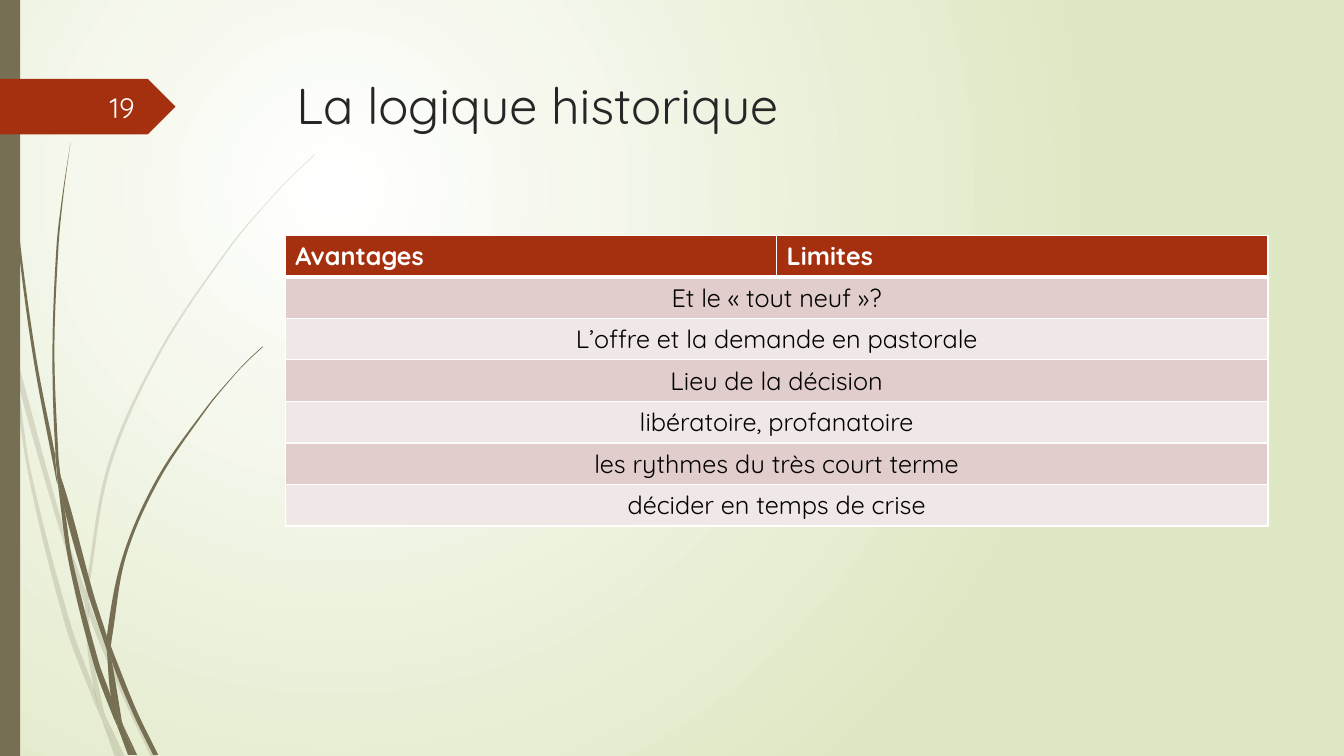
from pptx import Presentation
from pptx.dml.color import RGBColor
from pptx.enum.shapes import MSO_SHAPE as SHAPE
from pptx.enum.text import MSO_ANCHOR as ANCHOR, PP_ALIGN as ALIGN
from pptx.oxml import parse_xml
from pptx.oxml.ns import nsdecls, qn
from pptx.util import Inches, Pt

W, H = Inches(13.33), Inches(7.5)
COLS, ROWS = 160, 90
FONT = "Quicksand"
RUST, OLIVE, WHITE = "A53010", "766F54", "FFFFFF"
BANDS = ("E1CDCC", "F0E8E7")

HEADERS = ("Avantages", "Limites")
TOPICS = (
    "Et le « tout neuf »?",
    "L’offre et la demande en pastorale",
    "Lieu de la décision",
    "libératoire, profanatoire",
    "les rythmes du très court terme",
    "décider en temps de crise",
)

BLADE_ROWS = 750
PALE_BLADES = (
    ([(11, 350), (9, 322), (0, 282)], [(0, 299), (10, 344)]),
    ([(14, 345), (17, 376), (58, 522), (84, 599)], [(85, 586), (62, 520), (14, 345)]),
    ([(88, 596), (88, 610), (123, 694), (150, 751)], [(155, 751), (127, 692), (92, 607)]),
    ([(119, 751), (124, 751)], [(105, 711)]),
    ([(11, 350), (28, 470), (65, 621), (92, 693), (101, 714)],
     [(99, 707), (93, 683), (70, 619), (31, 469), (17, 376), (11, 350)]),
    ([(84, 599), (87, 646), (93, 683), (96, 692), (105, 711)],
     [(103, 706), (91, 646), (88, 610), (88, 608)]),
    ([(88, 584), (110, 462), (160, 349), (229, 245), (268, 198), (290, 175), (312, 154)],
     [(312, 153), (289, 175), (268, 197), (228, 244), (158, 348), (107, 461),
      (85, 584), (85, 586), (88, 596)]),
    ([(101, 714), (114, 751)], [(119, 751), (101, 714)]),
    ([(88, 608), (88, 610), (88, 596)], [(85, 586), (84, 599)]),
    ([(96, 692), (93, 683), (99, 707), (101, 714), (119, 751)], [(119, 751), (105, 711)]),
)
DARK_BLADES = (
    ([(7, 110), (17, 233), (33, 355), (56, 477), (57, 481)],
     [(55, 457), (55, 453), (36, 355), (19, 232), (8, 109), (5, 48), (4, 0), (3, 0), (4, 48)]),
    ([(88, 592), (106, 645)], [(106, 633), (106, 631), (93, 590), (60, 472), (64, 505), (88, 592)]),
    ([(110, 641), (111, 656), (132, 708), (152, 749)], [(157, 749), (136, 706), (113, 649)]),
    ([(57, 477), (68, 557), (93, 659), (111, 708), (117, 722)],
     [(116, 717), (110, 691), (98, 657), (72, 556), (64, 505), (57, 477)]),
    ([(60, 472), (58, 453), (54, 349), (58, 245), (63, 193), (70, 141)],
     [(70, 141), (62, 193), (56, 245), (52, 349), (55, 449), (60, 472)]),
    ([(133, 749), (136, 749)], [(122, 719)]),
    ([(57, 477), (64, 505)], [(60, 472), (55, 449), (55, 453)]),
    ([(111, 633), (125, 552), (158, 476), (205, 406), (231, 374), (245, 359), (261, 344)],
     [(260, 344), (245, 358), (231, 373), (204, 405), (156, 474), (122, 551),
      (106, 631), (110, 641)]),
    ([(117, 722), (127, 749)], [(131, 749), (117, 722)]),
    ([(106, 645), (110, 691), (116, 706), (122, 719)], [(121, 716), (111, 656), (109, 651)]),
    ([(106, 645), (109, 651), (111, 656)], [(110, 641), (106, 631), (106, 633)]),
    ([(116, 706), (110, 691), (116, 717), (117, 722), (130, 749)], [(133, 749), (122, 719)]),
)


def rgb(value):
    return RGBColor.from_string(value)


def grid(col, row, cols, rows):
    return tuple(round(n) for n in (W * col / COLS, H * row / ROWS, W * cols / COLS, H * rows / ROWS))


def write(tf, text, size=18, color="000000", bold=False, align=ALIGN.LEFT, anchor=ANCHOR.TOP):
    tf.word_wrap = True
    tf.vertical_anchor = anchor
    p = tf.paragraphs[0]
    p.alignment = align
    r = p.add_run()
    r.text = text
    r.font.name, r.font.size, r.font.bold = FONT, Pt(size), bold
    r.font.color.rgb = rgb(color)


def paint(sp, color, alpha=100):
    sp.shadow.inherit = False
    sp.fill.solid()
    sp.fill.fore_color.rgb = rgb(color)
    sp.line.fill.background()
    if alpha < 100:
        clr = sp.fill._xPr.find(".//" + qn("a:srgbClr"))
        clr.append(parse_xml(f'<a:alpha {nsdecls("a")} val="{alpha * 1000}"/>'))


def add_background(s):
    fill = s.background.fill
    fill.gradient()
    for stop, color, position in zip(fill.gradient_stops, (WHITE, "DFE8C4"), (0, 1)):
        stop.color.rgb = rgb(color)
        stop.position = position
    grad = s.element.find(".//" + qn("a:gradFill"))
    lin = grad.find(qn("a:lin"))
    grad.replace(lin, parse_xml(
        f'<a:path {nsdecls("a")} path="circle">'
        '<a:fillToRect l="50000" t="50000" r="100000" b="100000"/></a:path>'))


def along(chord, length):
    return chord / abs(chord) * length / 3 if chord else 0


def bend(sp, edge_sizes):
    outline = sp._element.find(".//" + qn("a:path"))
    nodes = [complex(int(pt.get("x")), int(pt.get("y"))) for pt in outline.iter(qn("a:pt"))]
    lines = outline.findall(qn("a:lnTo"))
    start = 0
    for size in edge_sizes:
        edge = nodes[start:start + size]
        ends = [edge[0], *edge, edge[-1]]
        for i, (a, b, c, d) in enumerate(zip(ends, ends[1:], ends[2:], ends[3:])):
            length = abs(c - b)
            curve = (b + along(c - a, length), c - along(d - b, length), c)
            pts = "".join(f'<a:pt x="{round(n.real)}" y="{round(n.imag)}"/>' for n in curve)
            outline.replace(lines[start + i], parse_xml(
                f'<a:cubicBezTo {nsdecls("a")}>{pts}</a:cubicBezTo>'))
        start += size


def add_grass(s, box, blades, alpha=100):
    left, top, _, height = box
    unit = height / BLADE_ROWS
    tuft = s.shapes.add_group_shape()
    for near, far in blades:
        outline = [(left + x * unit, top + y * unit) for x, y in near + far]
        pen = tuft.shapes.build_freeform(*outline[0])
        pen.add_line_segments(outline[1:], close=True)
        sp = pen.convert_to_shape()
        bend(sp, (len(near), len(far)))
        paint(sp, OLIVE, alpha)


def add_block(s, box, kind, color):
    paint(s.shapes.add_shape(kind, *box), color)


def add_label(s, box, text, **fmt):
    write(s.shapes.add_textbox(*box).text_frame, text, **fmt)


def style_cell(cell, color, bottom):
    cell.fill.solid()
    cell.fill.fore_color.rgb = rgb(color)
    tcPr = cell._tc.get_or_add_tcPr()
    for i, (side, width) in enumerate((("L", 1), ("R", 1), ("T", 1), ("B", bottom))):
        tcPr.insert(i, parse_xml(
            f'<a:ln{side} {nsdecls("a")} w="{Pt(width)}"><a:solidFill>'
            f'<a:srgbClr val="{WHITE}"/></a:solidFill></a:ln{side}>'))


def add_topics(s, box):
    count = len(TOPICS) + 1
    table = s.shapes.add_table(count, len(HEADERS), *box).table
    for row in table.rows:
        row.height = box[3] // count
    for cell, text in zip(table.rows[0].cells, HEADERS):
        style_cell(cell, RUST, 3)
        write(cell.text_frame, text, color=WHITE, bold=True)
    for i, text in enumerate(TOPICS, 1):
        first, last = table.rows[i].cells
        for cell in (first, last):
            style_cell(cell, BANDS[(i - 1) % 2], 1)
        first.merge(last)
        write(first.text_frame, text, align=ALIGN.CENTER)


def main():
    prs = Presentation()
    prs.slide_width, prs.slide_height = W, H
    s = prs.slides.add_slide(prs.slide_layouts[6])
    meadow = grid(0, 0, 38, ROWS)
    add_background(s)
    add_grass(s, meadow, PALE_BLADES, alpha=20)
    add_grass(s, meadow, DARK_BLADES)
    add_block(s, grid(0, 0, 2.4, ROWS), SHAPE.RECTANGLE, OLIVE)
    add_block(s, grid(0, 9.4, 20.9, 6.6), SHAPE.PENTAGON, RUST)
    add_label(s, grid(34.1, 8.2, 117, 16.8), "La logique historique", size=36, color="262626")
    add_topics(s, grid(33.96, 28, 117, 34.65))
    add_label(s, grid(7, 10.4, 10.2, 4.8), "19", size=20, color="FEFFFF",
              align=ALIGN.RIGHT, anchor=ANCHOR.MIDDLE)
    prs.save("out.pptx")


if __name__ == "__main__":
    main()
